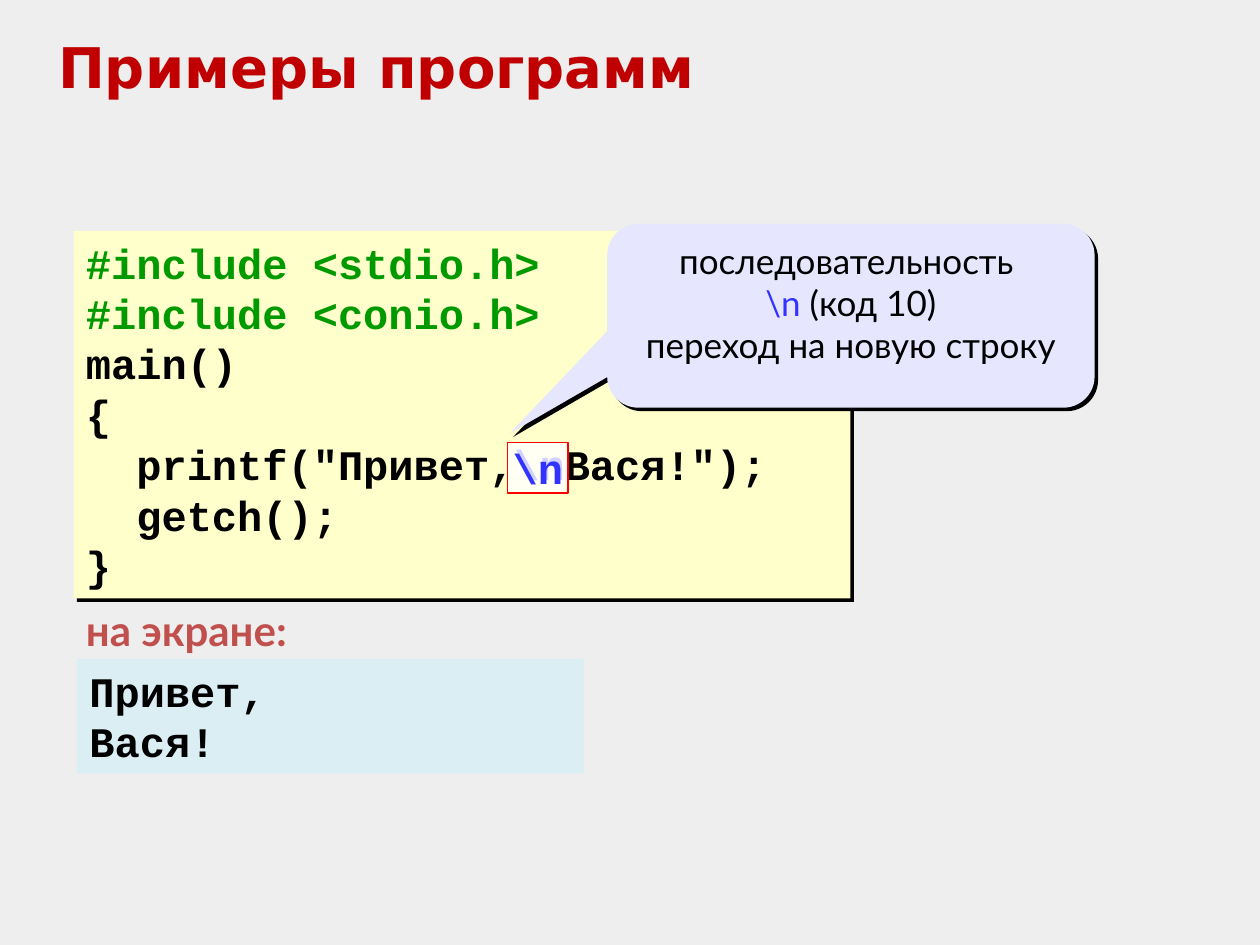
from lxml import etree
from pptx import Presentation
from pptx import util as u
from pptx.dml.color import RGBColor
from pptx.enum import shapes, text
from pptx.oxml import ns

Pt = u.Pt
COLORS = {
    "page": "EEEEEE", "title": "C00000", "code": "FFFFCC", "screen": "DBEEF4",
    "bubble": "E6E6FF", "black": "000000", "white": "FFFFFF", "red": "FF0000",
    "directive": "009900", "escape": "3333FF", "label": "C0504D",
}
MONO = "Courier New"


def rgb(name):
    """Return the named colour."""
    return RGBColor.from_string(COLORS[name])


def write(sp, paragraphs, font=MONO, size=24, color="black", bold=True,
          align=text.PP_ALIGN.LEFT, wrap=True, insets=(7.2, 3.6)):
    """Fill a shape with paragraphs, each a list of (text, colour) runs."""
    tf = sp.text_frame
    tf.word_wrap = wrap
    tf.auto_size = text.MSO_AUTO_SIZE.NONE
    tf.vertical_anchor = text.MSO_ANCHOR.TOP
    tf.margin_left = tf.margin_right = Pt(insets[0])
    tf.margin_top = tf.margin_bottom = Pt(insets[1])
    for i, runs in enumerate(paragraphs):
        p = tf.add_paragraph() if i else tf.paragraphs[0]
        p.alignment = align
        for words, tint in runs:
            if words == "\n":
                p.add_line_break()
                continue
            r = p.add_run()
            r.text = words
            r.font.name, r.font.size, r.font.bold = font, Pt(size), bold
            r.font.color.rgb = rgb(tint or color)


def add_shadow(sp):
    """Give a shape a hard black shadow to the lower right."""
    effects = sp._element.spPr.find(ns.qn("a:effectLst"))
    shadow = etree.SubElement(effects, ns.qn("a:outerShdw"), dist=str(Pt(2.8)),
                              dir="2700000", algn="ctr", rotWithShape="0")
    etree.SubElement(shadow, ns.qn("a:srgbClr"), val=COLORS["black"])


def add_panel(s, box, fill, kind=shapes.MSO_SHAPE.RECTANGLE, shadow=False):
    """Add a filled shape without outline."""
    sp = s.shapes.add_shape(kind, *map(Pt, box))
    sp.fill.solid()
    sp.fill.fore_color.rgb = rgb(fill)
    sp.line.fill.background()
    sp.shadow.inherit = False
    if shadow:
        add_shadow(sp)
    return sp


def add_title(s, box, words):
    """Place and format the title placeholder."""
    sp = s.shapes.title
    sp.left, sp.top, sp.width, sp.height = map(Pt, box)
    write(sp, [[(words, None)]], font="DejaVu Sans", size=32, color="title")


def add_code(s, box):
    """Add the program listing."""
    lines = [
        [("#include <stdio.h>", "directive")],
        [("#include <conio.h>", "directive")],
        [("main()", None)],
        [("{", None)],
        [('  printf("Привет,', None), ("\\n", "escape"), ('Вася!");', None)],
        [("  getch();", None)],
        [("}", None)],
    ]
    write(add_panel(s, box, "code", shadow=True), lines)


def add_output(s, box):
    """Add the label and, under it, the screen output."""
    x, y, w, h = box
    label_h = 34.5
    label = s.shapes.add_textbox(*map(Pt, (x, y, 140, 36.7)))
    write(label, [[("на экране:", None)]], font="Lato", color="label", wrap=False)
    screen = add_panel(s, (x + 2, y + label_h, w - 2, h - label_h), "screen")
    write(screen, [[("Привет,", None)], [("Вася!", None)]])


def add_callout(s, box):
    """Add the speech bubble that explains the escape sequence."""
    sp = add_panel(s, box, "bubble", shapes.MSO_SHAPE.ROUNDED_RECTANGULAR_CALLOUT, True)
    for i, value in enumerate((-0.7, 0.64, 0.17)):
        sp.adjustments[i] = value
    lines = [
        [("последовательность ", None), ("\n", None), ("\\n ", "escape"), ("(код 10)", None)],
        [("переход на новую строку", None)],
    ]
    write(sp, lines, font="Lato", size=20, bold=False, align=text.PP_ALIGN.CENTER)


def add_marker(s, box):
    """Add the outlined, slightly transparent escape sequence marker."""
    sp = add_panel(s, box, "white")
    fill = sp._element.spPr.find(ns.qn("a:solidFill"))
    etree.SubElement(fill[0], ns.qn("a:alpha"), val="78000")
    sp.line.color.rgb = rgb("red")
    sp.line.width = Pt(0.75)
    write(sp, [[("\\n", "escape")]], wrap=False, insets=(2.9, 0))


def main():
    """Build and save the slide."""
    prs = Presentation()
    prs.slide_width, prs.slide_height = Pt(720), Pt(540)
    s = prs.slides.add_slide(prs.slide_layouts[5])
    s.background.fill.solid()
    s.background.fill.fore_color.rgb = rgb("page")
    add_title(s, (26, 15, 668, 46), "Примеры программ")
    add_code(s, (42, 132, 444, 210))
    add_output(s, (42, 342, 291.5, 100))
    add_callout(s, (347, 128, 278.5, 105))
    add_marker(s, (290, 252.7, 34.6, 29))
    prs.save("out.pptx")


if __name__ == "__main__":
    main()
